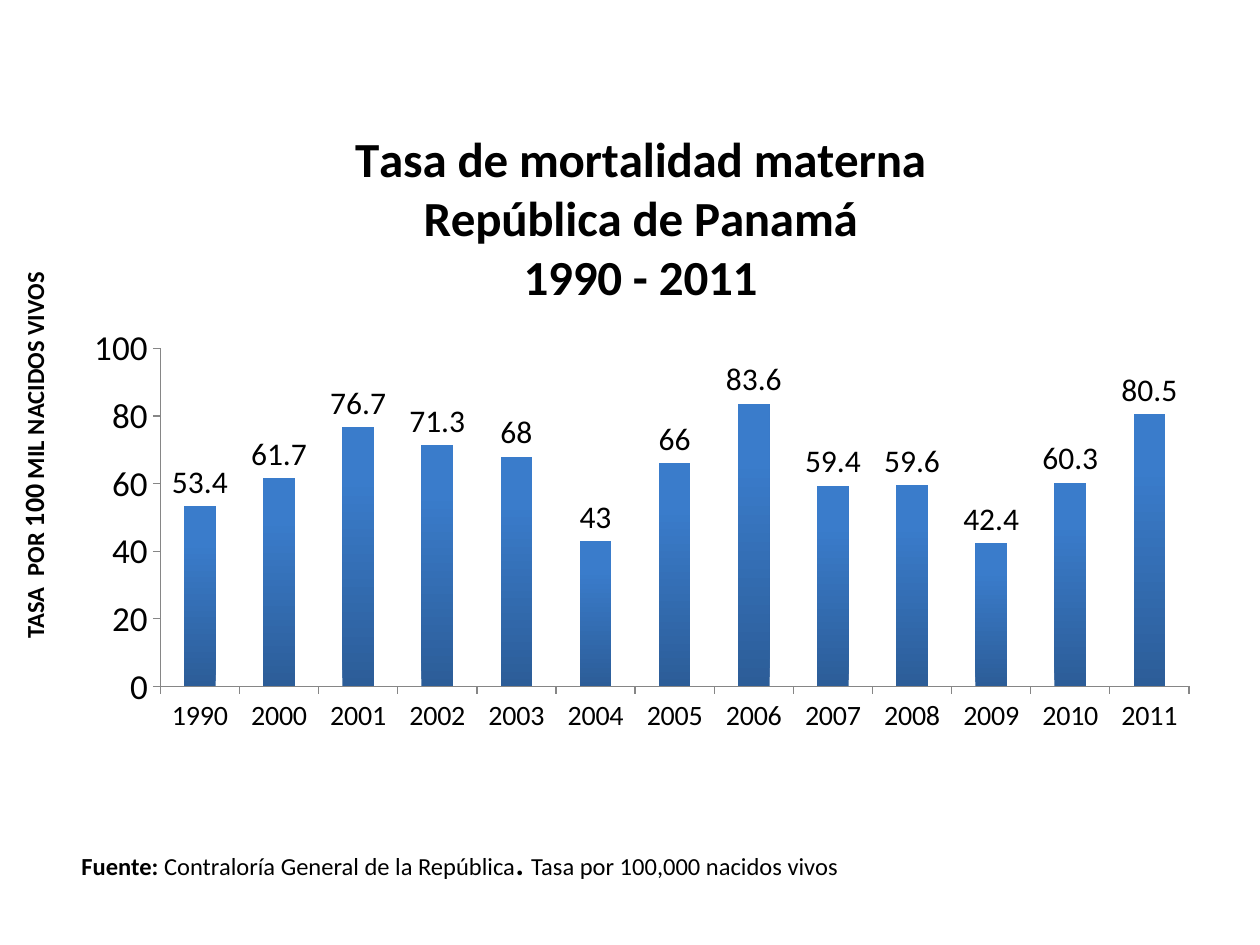
from dataclasses import dataclass

from pptx import Presentation
from pptx import util as u
from pptx.chart.data import CategoryChartData
from pptx.dml.color import RGBColor
from pptx.enum import chart as charts, text
from lxml import etree

EMU_PER_PX = 914400 / 126
YEARS = [1990, *range(2000, 2012)]
RATES = [53.4, 61.7, 76.7, 71.3, 68, 43, 66, 83.6, 59.4, 59.6, 42.4, 60.3, 80.5]
TITLE = "Tasa de mortalidad materna\nRepública de Panamá\n1990 - 2011"
PLOT = {"x": 0.08, "y": 0.38, "w": 0.9, "h": 0.53}


@dataclass(frozen=True)
class Theme:
    font: str = "Calibri"
    ink: str = "000000"
    axis: str = "868686"
    bar_bottom: str = "2C5D98"
    bar_top: str = "3A7CCB"
    title: int = 28
    values: int = 20
    labels: int = 18
    years: int = 16
    emphasis: int = 16
    note: int = 14
    separator: int = 18


THEME = Theme()


def px(length):
    return u.Emu(round(length * EMU_PER_PX))


def style_font(font, size, bold=False):
    font.name = THEME.font
    font.size = u.Pt(size)
    font.bold = bold
    font.color.rgb = RGBColor.from_string(THEME.ink)


def add_text(slide, box, runs):
    shape = slide.shapes.add_textbox(*map(px, box))
    shape.text_frame.word_wrap = True
    paragraph = shape.text_frame.paragraphs[0]
    for words, size, bold in runs:
        run = paragraph.add_run()
        run.text = words
        style_font(run.font, size, bold)
    return shape


def add_axis_caption(slide, box):
    shape = add_text(slide, box, [
        ("TASA  POR ", THEME.note, True),
        ("100", THEME.emphasis, True),
        (" MIL NACIDOS VIVOS", THEME.note, True),
    ])
    shape.text_frame._txBody.bodyPr.set("vert", "vert270")
    shape.text_frame.paragraphs[0]._p.get_or_add_pPr().set("marL", str(px(46)))


def add_source_note(slide, box):
    add_text(slide, box, [
        ("Fuente: ", THEME.note, True),
        ("Contraloría General de la República", THEME.note, False),
        (". ", THEME.separator, True),
        ("Tasa por 100,000 nacidos vivos", THEME.note, False),
    ])


def set_plot_layout(chart):
    plot_area = chart._chartSpace.chart.plotArea
    namespace = etree.QName(plot_area).namespace
    for old_layout in plot_area.findall(f"{{{namespace}}}layout"):
        plot_area.remove(old_layout)
    layout = etree.Element(f"{{{namespace}}}layout")
    manual = etree.SubElement(layout, f"{{{namespace}}}manualLayout")
    settings = {"layoutTarget": "inner", "xMode": "edge", "yMode": "edge", **PLOT}
    for name, value in settings.items():
        etree.SubElement(manual, f"{{{namespace}}}{name}").set("val", str(value))
    plot_area.insert(0, layout)


def style_title(chart):
    chart.has_title = True
    frame = chart.chart_title.text_frame
    frame.text = TITLE
    for paragraph in frame.paragraphs:
        paragraph.alignment = text.PP_ALIGN.CENTER
        for run in paragraph.runs:
            style_font(run.font, THEME.title, True)


def style_axes(chart):
    for axis, size in ((chart.category_axis, THEME.years), (chart.value_axis, THEME.values)):
        axis.has_major_gridlines = False
        axis.major_tick_mark = charts.XL_TICK_MARK.OUTSIDE
        axis.format.line.color.rgb = RGBColor.from_string(THEME.axis)
        axis.format.line.width = u.Pt(0.75)
        style_font(axis.tick_labels.font, size)
    chart.value_axis.minimum_scale = 0
    chart.value_axis.maximum_scale = 100
    chart.value_axis.major_unit = 20


def style_bars(plot):
    plot.gap_width = 150
    plot.vary_by_categories = False
    plot.has_data_labels = True
    plot.data_labels.show_value = True
    plot.data_labels.position = charts.XL_LABEL_POSITION.OUTSIDE_END
    style_font(plot.data_labels.font, THEME.labels)
    fill = plot.series[0].format.fill
    fill.gradient()
    fill.gradient_angle = 90
    stops = ((0, THEME.bar_bottom), (0.8, THEME.bar_top))
    for stop, (position, color) in zip(fill.gradient_stops, stops):
        stop.position = position
        stop.color.rgb = RGBColor.from_string(color)


def add_rate_chart(slide, box):
    data = CategoryChartData()
    data.categories = [str(year) for year in YEARS]
    data.add_series("Series 1", RATES)
    frame = slide.shapes.add_chart(
        charts.XL_CHART_TYPE.COLUMN_CLUSTERED, *map(px, box), data)
    chart = frame.chart
    chart.has_legend = False
    style_font(chart.font, THEME.labels)
    style_title(chart)
    style_axes(chart)
    style_bars(chart.plots[0])
    set_plot_layout(chart)


def main():
    presentation = Presentation()
    presentation.slide_width = px(1260)
    presentation.slide_height = px(945)
    slide = presentation.slides.add_slide(presentation.slide_layouts[6])
    add_axis_caption(slide, (10, 199, 59, 498))
    add_source_note(slide, (69, 838, 788, 42))
    add_rate_chart(slide, (69, 106, 1143, 638))
    presentation.save("out.pptx")


if __name__ == "__main__":
    main()
